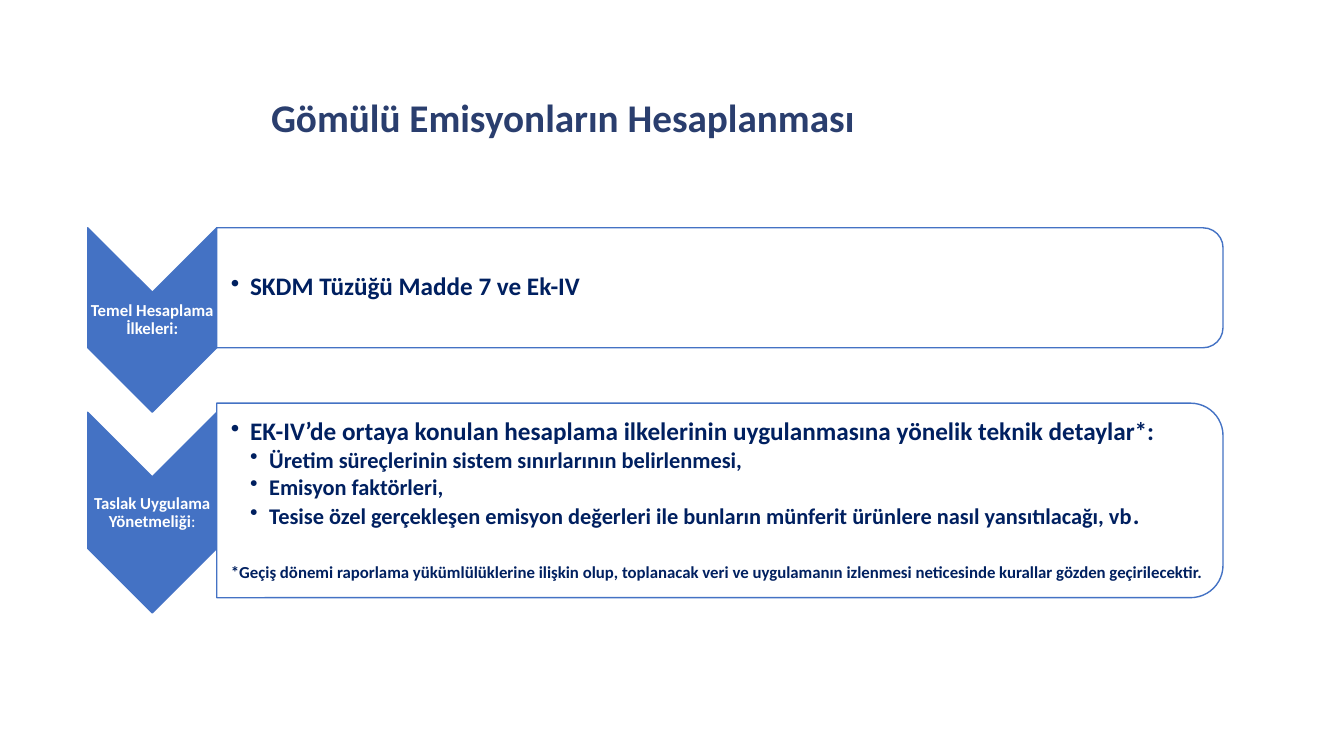
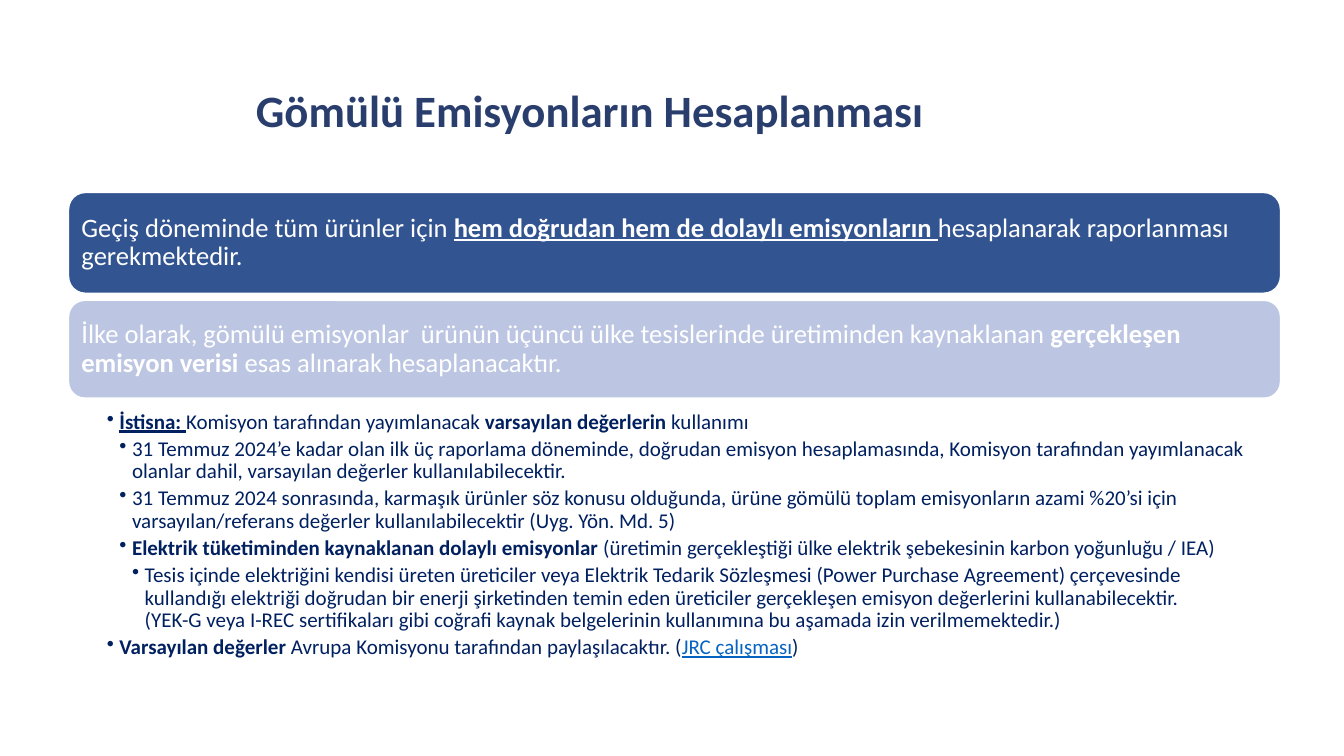
from copy import deepcopy

from lxml import etree
from pptx import Presentation
from pptx.dml.color import RGBColor
from pptx.enum.shapes import MSO_SHAPE
from pptx.enum.text import MSO_ANCHOR, PP_ALIGN
from pptx.oxml.ns import qn
from pptx.util import Inches, Pt

CHEVRON = MSO_SHAPE.CHEVRON
PANEL = MSO_SHAPE.ROUND_2_SAME_RECTANGLE
BANNER = MSO_SHAPE.ROUNDED_RECTANGLE
TOP, MIDDLE = MSO_ANCHOR.TOP, MSO_ANCHOR.MIDDLE
LEFT, CENTER = PP_ALIGN.LEFT, PP_ALIGN.CENTER

WHITE = RGBColor(0xFF, 0xFF, 0xFF)
TITLE_BLUE = RGBColor(0x2A, 0x3E, 0x6E)
NAVY = RGBColor(0x00, 0x20, 0x60)
BLUE = RGBColor(0x44, 0x72, 0xC4)
DEEP_BLUE = RGBColor(0x32, 0x54, 0x91)
PALE_BLUE = RGBColor(0xBC, 0xC6, 0xE2)
LINK_BLUE = RGBColor(0x05, 0x63, 0xC1)

FONT = "Calibri"
TITLE = "Gömülü Emisyonların Hesaplanması"
PLAIN = {}
BOLD = {"bold": True}
STRONG = {"bold": True, "underline": True}
LINK = {"underline": True, "color": LINK_BLUE}
BREAK = ("\v", PLAIN)

STEPS = [
    {
        "label": [("Temel Hesaplama İlkeleri:", BOLD)],
        "label_frame": (2.90, 0.55),
        "chevron": (2.26, 1.83),
        "panel": (2.26, 1.19),
        "body": [{"level": 1, "size": 18, "spans": [("SKDM Tüzüğü Madde 7 ve Ek-IV", BOLD)]}],
    },
    {
        "label": [("Taslak Uygulama Yönetmeliği", BOLD), (":", PLAIN)],
        "label_frame": (4.73, 0.72),
        "chevron": (4.09, 1.99),
        "panel": (4.00, 1.93),
        "body": [
            {"level": 1, "size": 18, "spans": [
                ("EK-IV’de ortaya konulan hesaplama ilkelerinin uygulanmasına yönelik teknik detaylar*:", BOLD)]},
            {"level": 2, "size": 16, "spans": [
                ("Üretim süreçlerinin sistem sınırlarının belirlenmesi,", BOLD)]},
            {"level": 2, "size": 16, "spans": [("Emisyon faktörleri,", BOLD)]},
            {"level": 2, "size": 16, "spans": [
                ("Tesise özel gerçekleşen emisyon değerleri ile bunların münferit ürünlere nasıl "
                 "yansıtılacağı, vb", BOLD),
                (".", {"bold": True, "size": Pt(18)})]},
            {"size": 12, "before": 22, "spans": [
                ("*Geçiş dönemi raporlama yükümlülüklerine ilişkin olup, toplanacak veri ve uygulamanın "
                 "izlenmesi neticesinde kurallar gözden geçirilecektir.", BOLD)]},
        ],
    },
]

BANNERS = [
    (1.91, 1.00, DEEP_BLUE, [
        ("Geçiş döneminde tüm ürünler için ", PLAIN),
        ("hem doğrudan hem de dolaylı emisyonların ", STRONG),
        ("hesaplanarak raporlanması gerekmektedir.", PLAIN)]),
    (2.98, 0.97, PALE_BLUE, [
        ("İlke olarak, gömülü emisyonlar  ürünün üçüncü ülke tesislerinde üretiminden kaynaklanan ", PLAIN),
        ("gerçekleşen emisyon verisi ", BOLD),
        ("esas alınarak hesaplanacaktır.", PLAIN)]),
]

EXCEPTIONS = [
    (1, [("İstisna: ", STRONG), ("Komisyon tarafından yayımlanacak ", PLAIN),
         ("varsayılan değerlerin ", BOLD), ("kullanımı", PLAIN)]),
    (2, [("31 Temmuz 2024’e kadar olan ilk üç raporlama döneminde, doğrudan emisyon hesaplamasında, "
          "Komisyon tarafından yayımlanacak olanlar dahil, varsayılan değerler kullanılabilecektir.", PLAIN)]),
    (2, [("31 Temmuz 2024 sonrasında, karmaşık ürünler söz konusu olduğunda, ürüne gömülü toplam "
          "emisyonların azami %20’si için varsayılan/referans değerler kullanılabilecektir "
          "(Uyg. Yön. Md. 5)", PLAIN)]),
    (2, [("Elektrik tüketiminden kaynaklanan dolaylı emisyonlar ", BOLD),
         ("(üretimin gerçekleştiği ülke elektrik şebekesinin karbon yoğunluğu / IEA)", PLAIN)]),
    (3, [("Tesis içinde elektriğini kendisi üreten üreticiler veya Elektrik Tedarik Sözleşmesi "
          "(Power Purchase Agreement) çerçevesinde kullandığı elektriği doğrudan bir enerji şirketinden "
          "temin eden üreticiler gerçekleşen emisyon değerlerini kullanabilecektir.", PLAIN),
         BREAK,
         ("(YEK-G veya I-REC sertifikaları gibi coğrafi kaynak belgelerinin kullanımına bu aşamada "
          "izin verilmemektedir.)", PLAIN)]),
    (1, [("Varsayılan değerler ", BOLD), ("Avrupa Komisyonu tarafından paylaşılacaktır. (", PLAIN),
         ("JRC çalışması", LINK), (")", PLAIN)]),
]

CHEVRON_LEFT, CHEVRON_WIDTH = 0.87, 1.28
PANEL_LEFT, PANEL_WIDTH = 2.15, 9.98
BANNER_LEFT, BANNER_WIDTH = 0.68, 12.02


def add_bullet(para, level, step):
    para.level = level
    properties = para._p.get_or_add_pPr()
    properties.set("marL", str(Inches(step * level)))
    properties.set("indent", str(Inches(-step)))
    etree.SubElement(properties, qn("a:buChar")).set("char", "•")


def add_spans(para, spans, size, color):
    for text, style in spans:
        if text == "\v":
            para.add_line_break()
            line_break = para._p.findall(qn("a:br"))[-1]
            line_break.append(deepcopy(para.runs[-1].font._element))
            continue
        span = para.add_run()
        span.text = text
        font = span.font
        font.name, font.size, font.bold = FONT, Pt(size), False
        font.color.rgb = style.get("color", color)
        for name in ("bold", "underline", "size"):
            if name in style:
                setattr(font, name, style[name])


def fill_text(shape, paragraphs, color, insets, anchor=MIDDLE, align=LEFT, step=0.19, after=0):
    frame = shape.text_frame
    frame.word_wrap = True
    frame.vertical_anchor = anchor
    frame.margin_left, frame.margin_top, frame.margin_right, frame.margin_bottom = map(Inches, insets)
    for index, item in enumerate(paragraphs):
        para = frame.add_paragraph() if index else frame.paragraphs[0]
        para.alignment = align
        if "level" in item:
            add_bullet(para, item["level"], step)
        para.line_spacing = 0.9
        para.space_after = Pt(after)
        if "before" in item:
            para.space_before = Pt(item["before"])
        add_spans(para, item["spans"], item["size"], color)


def add_text(page, frame, *args, **options):
    box = page.shapes.add_textbox(*map(Inches, frame))
    fill_text(box, *args, **options)


def add_block(page, kind, frame, fill, line):
    block = page.shapes.add_shape(kind, *map(Inches, frame))
    block.shadow.inherit = False
    block.fill.solid()
    block.fill.fore_color.rgb = fill
    block.line.color.rgb = line
    block.line.width = Pt(1)
    return block


def add_turned(page, kind, left, top, width, height, fill):
    frame = (left + (width - height) / 2, top + (height - width) / 2, height, width)
    add_block(page, kind, frame, fill, BLUE).rotation = 90


def add_page(deck, title_left, title_top, title_size):
    page = deck.slides.add_slide(deck.slide_layouts[6])
    title = [{"size": title_size, "spans": [(TITLE, BOLD)]}]
    add_text(page, (title_left, title_top, 10.03, 0.86), title, TITLE_BLUE,
             (0.1, 0.05, 0.1, 0.05), anchor=TOP)
    return page


def build_steps(deck):
    page = add_page(deck, 2.59, 0.93, 28)
    for step in STEPS:
        top, height = step["chevron"]
        add_turned(page, CHEVRON, CHEVRON_LEFT, top, CHEVRON_WIDTH, height, BLUE)
        top, height = step["label_frame"]
        add_text(page, (CHEVRON_LEFT, top, CHEVRON_WIDTH, height),
                 [{"size": 12, "spans": step["label"]}], WHITE, (0.01,) * 4, align=CENTER)
        top, height = step["panel"]
        add_turned(page, PANEL, PANEL_LEFT, top, PANEL_WIDTH, height, WHITE)
        add_text(page, (PANEL_LEFT, top, PANEL_WIDTH - 0.09, height),
                 step["body"], NAVY, (0.14, 0.01, 0.01, 0.01), after=2)


def build_exceptions(deck):
    page = add_page(deck, 2.44, 0.83, 32)
    for top, height, fill, spans in BANNERS:
        banner = add_block(page, BANNER, (BANNER_LEFT, top, BANNER_WIDTH, height), fill, WHITE)
        fill_text(banner, [{"size": 19, "spans": spans}], WHITE, (0.08,) * 4)
    paragraphs = [{"level": level, "size": 15, "spans": spans} for level, spans in EXCEPTIONS]
    add_text(page, (BANNER_LEFT, 4.05, BANNER_WIDTH, 3.05), paragraphs, NAVY,
             (0.38, 0.03, 0.15, 0.03), anchor=TOP, step=0.125, after=3)


def main():
    deck = Presentation()
    deck.slide_width, deck.slide_height = Inches(13.33), Inches(7.5)
    build_steps(deck)
    build_exceptions(deck)
    deck.save("out.pptx")


if __name__ == "__main__":
    main()
